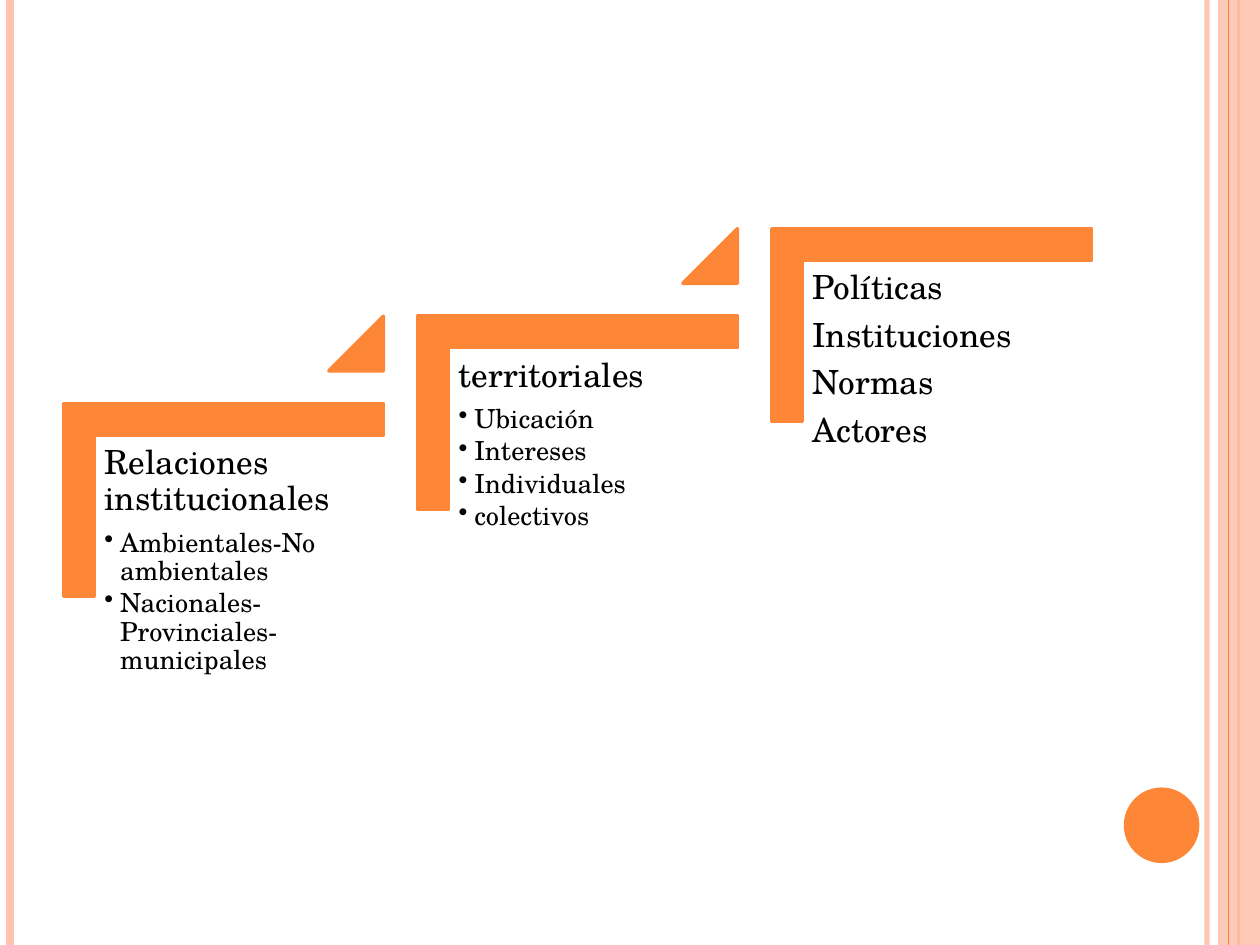
from lxml import etree
from pptx import Presentation
from pptx.dml.color import RGBColor
from pptx.enum.shapes import MSO_CONNECTOR, MSO_SHAPE
from pptx.enum.text import MSO_ANCHOR, PP_ALIGN
from pptx.oxml.ns import qn
from pptx.util import Pt

STRAIGHT = MSO_CONNECTOR.STRAIGHT
RECTANGLE, OVAL = MSO_SHAPE.RECTANGLE, MSO_SHAPE.OVAL
CORNER, TRIANGLE = MSO_SHAPE.CORNER, MSO_SHAPE.ISOSCELES_TRIANGLE
TOP, LEFT = MSO_ANCHOR.TOP, PP_ALIGN.LEFT

ORANGE = RGBColor(0xFE, 0x86, 0x37)
PEACH = RGBColor(0xFE, 0xC3, 0xAE)
BLACK = RGBColor(0, 0, 0)
FONT = "TeX Gyre Schola"
WIDTH, HEIGHT = 720, 540
BLANK_LAYOUT = 6

# Each step: headings, then bulleted details
STEPS = [
    (["Relaciones institucionales"],
     ["Ambientales-No ambientales", "Nacionales-Provinciales-municipales"]),
    (["territoriales"],
     ["Ubicación", "Intereses", "Individuales", "colectivos"]),
    (["Políticas", "Instituciones", "Normas", "Actores"], []),
]
FIRST_LEFT, FIRST_TOP = 72.7, 194.4
STEP_RIGHT, STEP_UP = 202.3, 50

deck = Presentation()
deck.slide_width, deck.slide_height = Pt(WIDTH), Pt(HEIGHT)
slide = deck.slides.add_slide(deck.slide_layouts[BLANK_LAYOUT])


def add_filled(kind, left, top, width, height, color, line_width=0):
    shape = slide.shapes.add_shape(kind, Pt(left), Pt(top), Pt(width), Pt(height))
    shape.shadow.inherit = False
    shape.fill.solid()
    shape.fill.fore_color.rgb = color
    if line_width:
        shape.line.color.rgb = color
        shape.line.width = Pt(line_width)
    else:
        shape.line.fill.background()
    return shape


def set_opacity(paint, percent):
    """Make the solid fill found inside an XML element partly transparent."""
    color = paint.find(".//" + qn("a:srgbClr"))
    etree.SubElement(color, qn("a:alpha"), val=str(percent * 1000))


# Page borders; the side band lies between the third and fourth line
for x, color, width, opacity in [
    (689.8, PEACH, 3, 93),
    (5.8, PEACH, 4.5, 100),
    (707.8, ORANGE, 1.5, 100),
    (702, ORANGE, 0.75, 100),
]:
    if x == 702:
        band = add_filled(RECTANGLE, 696, 0, 24, HEIGHT, PEACH)
        set_opacity(band.element.spPr.find(qn("a:solidFill")), 87)
    border = slide.shapes.add_connector(STRAIGHT, Pt(x), 0, Pt(x), Pt(HEIGHT))
    border.line.color.rgb = color
    border.line.width = Pt(width)
    if opacity < 100:
        set_opacity(border.element.spPr.find(qn("a:ln")), opacity)
    etree.SubElement(border.element.spPr, qn("a:effectLst"))

add_filled(OVAL, 642.2, 450, 43.2, 43.2, ORANGE)

# Rising staircase
for index, (headings, details) in enumerate(STEPS):
    left = FIRST_LEFT + index * STEP_RIGHT
    top = FIRST_TOP - index * STEP_UP

    corner = add_filled(CORNER, left, top, 110.2, 182.9, ORANGE, 2)
    corner.rotation = 90
    corner.adjustments[0] = corner.adjustments[1] = 0.161

    box = slide.shapes.add_textbox(Pt(left - 18.7), Pt(top + 54.7), Pt(164.9), Pt(144.7))
    frame = box.text_frame
    frame.word_wrap = True
    frame.vertical_anchor = TOP
    frame.margin_left = frame.margin_right = Pt(5.7)
    frame.margin_top = frame.margin_bottom = Pt(5.7)
    for number, text in enumerate(headings + details):
        para = frame.paragraphs[0] if number == 0 else frame.add_paragraph()
        is_detail = number >= len(headings)
        para.text = text
        para.alignment = LEFT
        para.line_spacing = 0.9
        para.space_after = Pt(2.25 if is_detail else 6.65)
        para.font.name = FONT
        para.font.size = Pt(15 if is_detail else 19)
        para.font.color.rgb = BLACK
        if is_detail:
            para.level = 1
            properties = para._p.get_or_add_pPr()
            properties.set("marL", str(Pt(9)))
            properties.set("indent", str(Pt(-9)))
            bullet = etree.Element(qn("a:buChar"), char="•")
            properties.find(qn("a:defRPr")).addprevious(bullet)

    if index < len(STEPS) - 1:
        arrow = add_filled(TRIANGLE, left + 115.2, top - 13.7, 31.2, 31.2, ORANGE, 2)
        arrow.adjustments[0] = 1

deck.save("out.pptx")
